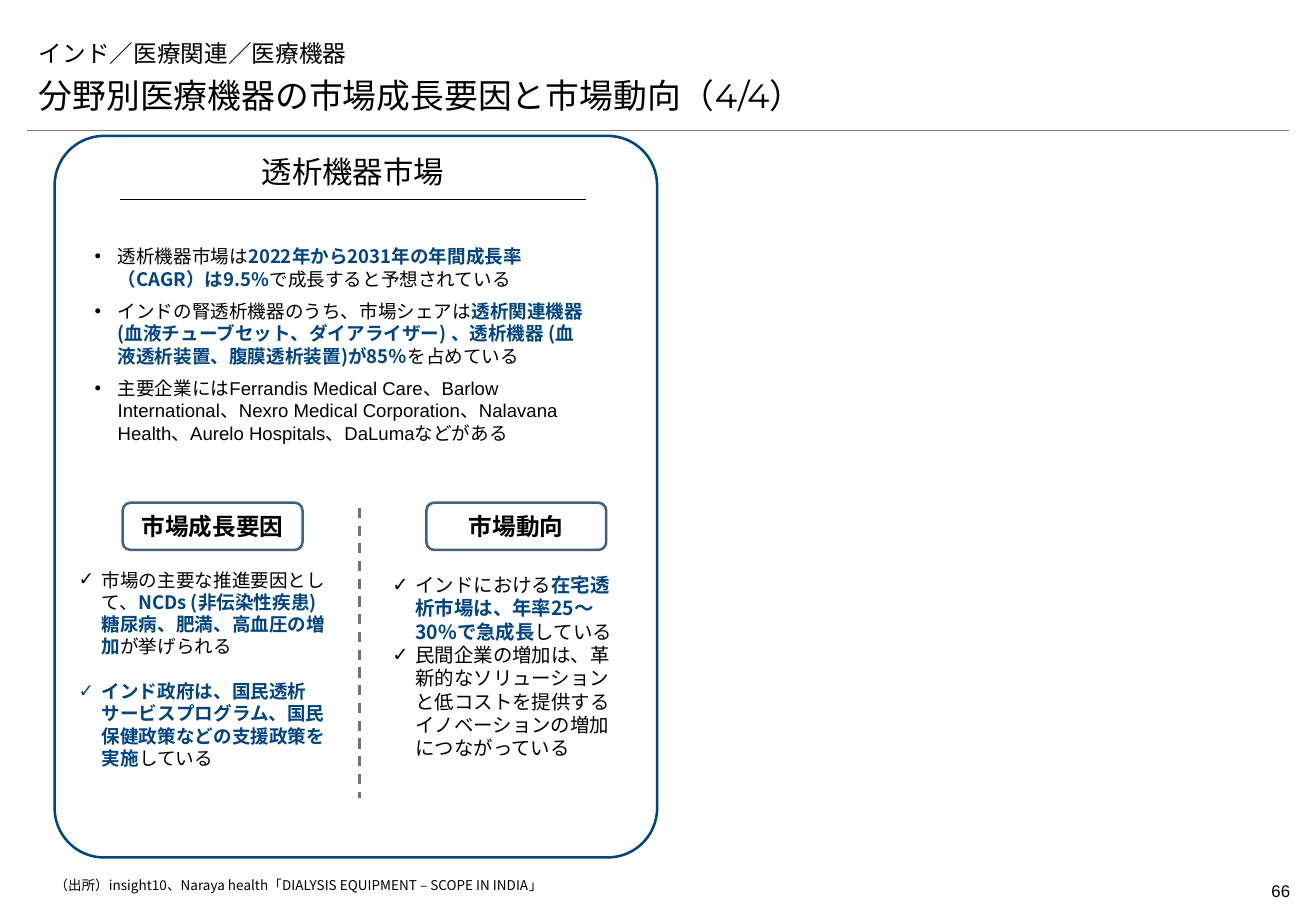
from lxml.etree import SubElement
from pptx import Presentation
from pptx.dml.color import RGBColor
from pptx.enum.dml import MSO_LINE
from pptx.enum.shapes import MSO_CONNECTOR, MSO_SHAPE
from pptx.enum.text import MSO_ANCHOR, MSO_AUTO_SIZE, PP_ALIGN
from pptx.oxml.ns import qn
from pptx.util import Pt

JAPANESE = "Noto Sans CJK JP"
BLACK, NAVY, STEEL = "000000", "004481", "40647F"
hex_color = RGBColor.from_string


def write(frame, paragraphs, size, align=PP_ALIGN.LEFT, anchor=MSO_ANCHOR.TOP,
          bullet=None, gap=0, after=0, margin=(7.2, 3.6)):
    """Fill a frame; each paragraph is a list of (text, color, bold, latin font) runs."""
    frame.word_wrap = True
    frame.auto_size = MSO_AUTO_SIZE.NONE
    frame.vertical_anchor = anchor
    frame.margin_left = frame.margin_right = Pt(margin[0])
    frame.margin_top = frame.margin_bottom = Pt(margin[1])
    for index, runs in enumerate(paragraphs):
        paragraph = frame.add_paragraph() if index else frame.paragraphs[0]
        properties = paragraph._p.get_or_add_pPr()
        indent = Pt(13.7) if bullet else 0
        properties.set("marL", str(indent))
        properties.set("indent", str(-indent))
        if bullet:
            SubElement(properties, qn("a:buFont"), typeface="Arial")
            SubElement(properties, qn("a:buChar"), char=bullet)
        else:
            SubElement(properties, qn("a:buNone"))
        paragraph.alignment = align
        paragraph.line_spacing = Pt(round(size * 1.2, 1))
        paragraph.space_before = Pt(gap if index else 0)
        paragraph.space_after = Pt(after)
        for text, color, bold, latin in runs:
            run = paragraph.add_run()
            run.text = text
            run.font.size = Pt(size)
            run.font.bold = bold
            run.font.color.rgb = hex_color(color)
            run.font.name = latin
            run_properties = run._r.get_or_add_rPr()
            run_properties.set("lang", "ja-JP")
            SubElement(run_properties, qn("a:ea"), typeface=JAPANESE)


def draw_line(start, end, color, width):
    line = slide.shapes.add_connector(
        MSO_CONNECTOR.STRAIGHT, *[Pt(value) for value in start + end])
    line.line.color.rgb = hex_color(color)
    line.line.width = Pt(width)
    SubElement(line._element.spPr, qn("a:effectLst"))
    return line


presentation = Presentation()
presentation.slide_width, presentation.slide_height = Pt(780), Pt(540)
slide = presentation.slides.add_slide(presentation.slide_layouts[1])

# Heading
draw_line((15.8, 77), (764, 77), "7F7F7F", 0.25)
headings = [
    (slide.shapes.title, "インド／医療関連／医療機器", 18.7, 24.5, 14, JAPANESE),
    (slide.placeholders[1], "分野別医療機器の市場成長要因と市場動向（4/4）", 40.3, 31.7, 20,
     "Montserrat"),
]
for heading, text, top, height, size, latin in headings:
    heading.left, heading.top = Pt(15.8), Pt(top)
    heading.width, heading.height = Pt(748.5), Pt(height)
    write(heading.text_frame, [[(text, BLACK, False, latin)]], size,
          anchor=MSO_ANCHOR.BOTTOM)

# Panel and badges
outlines = [
    ((32.4, 80.6, 357.1, 427.7), 0.082, NAVY, None),
    ((72.7, 298, 106.6, 28), 0.167, STEEL, "市場成長要因"),
    ((252.7, 298, 106.6, 28), 0.167, STEEL, "市場動向"),
]
for place, corner, color, label in outlines:
    outline = slide.shapes.add_shape(
        MSO_SHAPE.ROUNDED_RECTANGLE, *[Pt(value) for value in place])
    outline.adjustments[0] = corner
    outline.shadow.inherit = False
    outline.fill.background()
    outline.line.color.rgb = hex_color(color)
    outline.line.width = Pt(1.5)
    if label:
        write(outline.text_frame, [[(label, BLACK, True, JAPANESE)]], 14,
              PP_ALIGN.CENTER, MSO_ANCHOR.MIDDLE, margin=(0, 0))
draw_line((213.1, 301), (213.1, 473), "727272", 1.5).line.dash_style = MSO_LINE.DASH

# Market name
market = slide.shapes.add_table(1, 1, Pt(70.6), Pt(88.6), Pt(277.2), Pt(29.5)).table
market.first_row = market.horz_banding = False
name_cell = market.cell(0, 0)
write(name_cell.text_frame, [[("透析機器市場", BLACK, False, JAPANESE)]], 18,
      PP_ALIGN.CENTER)
cell_properties = name_cell._tc.get_or_add_tcPr()
for side, color in [("L", "FFFFFF"), ("R", "FFFFFF"), ("T", "FFFFFF"), ("B", BLACK)]:
    border = SubElement(cell_properties, qn(f"a:ln{side}"), w=str(Pt(1)))
    SubElement(SubElement(border, qn("a:solidFill")), qn("a:srgbClr"), val=color)
name_cell.fill.background()

# Lists, source and page number
plain = (BLACK, False, JAPANESE)
strong = (NAVY, True, JAPANESE)
arial = (BLACK, False, "Arial")
overview = [
    [("透析機器市場は", *plain),
     ("2022年から2031年の年間成長率（CAGR）は9.5%", *strong),
     ("で成長すると予想されている", *plain)],
    [("インドの腎透析機器のうち、市場シェアは", *plain),
     ("透析関連機器 (血液チューブセット、ダイアライザー) 、透析機器 "
      "(血液透析装置、腹膜透析装置)が85％", *strong),
     ("を占めている", *plain)],
    [("主要企業には", *plain),
     ("Ferrandis Medical Care、Barlow International、Nexro Medical Corporation、"
      "Nalavana Health、Aurelo Hospitals、DaLuma", *arial),
     ("などがある", *plain)],
]
drivers = [
    [("市場の主要な推進要因として、", *plain),
     ("NCDs (非伝染性疾患) 糖尿病、肥満、高血圧の増加", *strong),
     ("が挙げられる", *plain)],
    [("インド政府は、国民透析サービスプログラム、国民保健政策などの支援政策を実施", *strong),
     ("している", *plain)],
]
trends = [
    [("インドにおける", *plain),
     ("在宅透析市場は、年率25～30%で急成長", *strong),
     ("している", *plain)],
    [("民間企業の増加は、革新的なソリューションと低コストを提供する"
      "イノベーションの増加につながっている", *plain)],
]
source = [[("（出所）insight10、Naraya health「DIALYSIS EQUIPMENT – SCOPE IN INDIA」",
            *plain)]]
page_number = [[("66", *arial)]]
texts = [
    ((49, 141.8, 307.4, 126), overview, 11, dict(bullet="•", gap=3, after=3)),
    ((39.6, 333.4, 165.6, 140.4), drivers, 11, dict(bullet="✓", gap=13.2)),
    ((225.4, 336.2, 152.6, 118.8), trends, 11.5, dict(bullet="✓")),
    ((32.4, 519.8, 326, 12.2), source, 8, dict(margin=(0, 0))),
    ((707.8, 518.4, 56.9, 19.4), page_number, 10,
     dict(align=PP_ALIGN.RIGHT, margin=(0, 3.6))),
]
for place, paragraphs, size, layout in texts:
    box = slide.shapes.add_textbox(*[Pt(value) for value in place])
    write(box.text_frame, paragraphs, size, **layout)

presentation.save("out.pptx")
